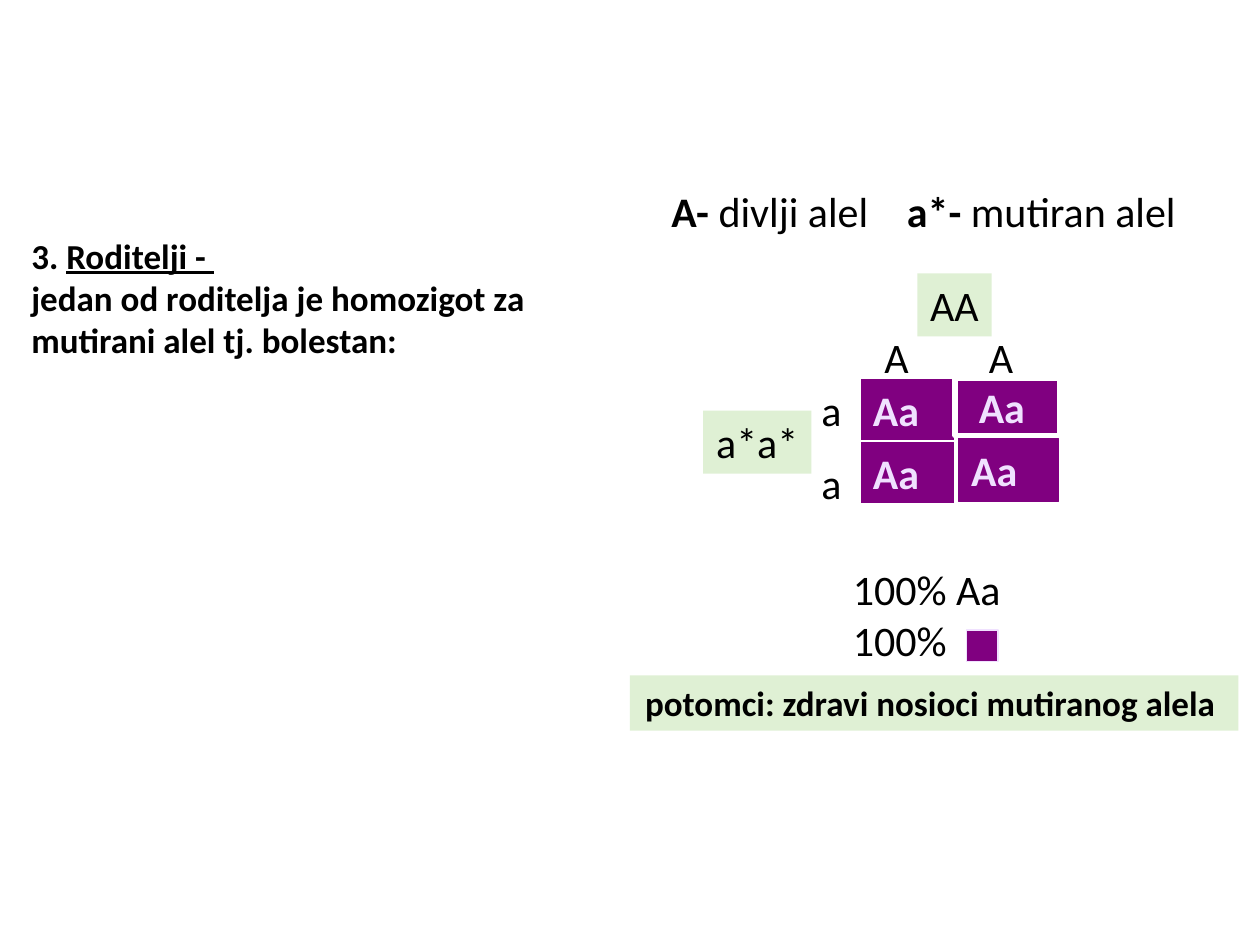
from dataclasses import dataclass
from lxml.etree import SubElement
from pptx import Presentation
from pptx.dml.color import RGBColor
from pptx.enum.shapes import MSO_SHAPE
from pptx.enum.text import MSO_ANCHOR, PP_ALIGN
from pptx.oxml.ns import qn
from pptx.util import Inches, Pt


@dataclass(frozen=True)
class Theme:
    font: str = "Calibri"
    ink: str = "000000"
    purple: str = "800080"
    lilac: str = "F0E1FF"
    green: str = "DFF0D4"
    white: str = "FFFFFF"
    large: int = 24
    small: int = 20


T = Theme()


def add_runs(p, runs, size, color):
    for text, style in runs:
        r = p.add_run()
        r.text = text
        r.font.color.rgb = RGBColor.from_string(color)
        fmt = {"name": T.font, "size": Pt(size), **style}
        for name, value in fmt.items():
            setattr(r.font, name, value)


def set_text(s, paras, size=T.large, color=T.ink, align=PP_ALIGN.LEFT, wrap=True):
    tf = s.text_frame
    fmt = {"word_wrap": wrap, "vertical_anchor": MSO_ANCHOR.TOP}
    for name, value in fmt.items():
        setattr(tf, name, value)
    for i, runs in enumerate(paras):
        p = tf.add_paragraph() if i else tf.paragraphs[0]
        p.alignment = align
        add_runs(p, runs, size, color)


def add_text(slide, box, paras, **style):
    s = slide.shapes.add_textbox(*map(Inches, box))
    set_text(s, paras, **style)
    return s


def add_rect(slide, box, fill, line=None, weight=0.75):
    s = slide.shapes.add_shape(MSO_SHAPE.RECTANGLE, *map(Inches, box))
    s.shadow.inherit = False
    s.fill.solid()
    s.fill.fore_color.rgb = RGBColor.from_string(fill)
    if line:
        s.line.color.rgb = RGBColor.from_string(line)
        s.line.width = Pt(weight)
    else:
        s.line.fill.background()
    return s


def add_badge(slide, box, text, **style):
    s = add_rect(slide, box, T.green)
    set_text(s, [[(text, {"bold": style.pop("bold", False)})]],
             align=PP_ALIGN.CENTER, **style)


def add_case(slide, x, y, w, h):
    add_text(slide, (x, y, w, h), [
        [("3. ", {"bold": True}), ("Roditelji - ", {"bold": True, "underline": True})],
        [("jedan od roditelja je homozigot za mutirani alel tj. bolestan:", {"bold": True})],
    ], size=T.small)


def add_legend(slide, x, y, w, h):
    s = add_text(slide, (x, y, w, h), [[
        ("A- ", {"bold": True}), ("divlji alel\t", {}),
        ("a*- ", {"bold": True}), ("mutiran alel", {}),
    ]])
    tabs = SubElement(s.text_frame.paragraphs[0]._p.get_or_add_pPr(), qn("a:tabLst"))
    SubElement(tabs, qn("a:tab"), pos=str(Inches(1.87)), algn="l")


def add_cross(slide, x, y, w, h):
    genotype = [[("Aa", {"bold": True})]]
    row = 0.5
    left, top = x + 1.25, y + 0.83
    for i in range(2):
        s = add_rect(slide, (left, top + i * row, 0.75, row), T.purple, T.white)
        set_text(s, genotype, color=T.lilac)
    add_rect(slide, (left + 0.75, top, 0.83, 0.46), T.purple, T.white, 3)
    add_text(slide, (left + 0.84, top - 0.02, 0.63, row), genotype,
             color=T.lilac, wrap=False)
    s = add_rect(slide, (left + 0.78, top + 0.48, 0.79, row), T.purple, T.purple)
    set_text(s, genotype, color=T.lilac)

    for i in range(2):
        add_text(slide, (x + 1.34 + i * 0.83, y + 0.41, 0.43, row),
                 [[("A", {})]], wrap=False)
        add_text(slide, (x + 0.84, top + i * 0.58, 0.38, row),
                 [[("a", {})]], wrap=False)
    add_badge(slide, (x + 1.7, y, 0.59, row), "AA", wrap=False)
    add_badge(slide, (x, y + 1.09, 0.86, row), "a*a*", wrap=False)


def add_outcome(slide, x, y, w, h):
    for i, label in enumerate(("100% Aa", "100%")):
        add_text(slide, (x + 1.67, y + i * 0.41, 1.92, 0.5), [[(label, {})]])
    add_rect(slide, (x + 2.67, y + 0.58, 0.25, 0.25), T.purple, T.lilac)
    add_badge(slide, (x, y + h - 0.44, w, 0.44),
              "potomci: zdravi nosioci mutiranog alela ", size=T.small, bold=True)


def main():
    prs = Presentation()
    prs.slide_width, prs.slide_height = Inches(10), Inches(7.5)
    slide = prs.slides.add_slide(prs.slide_layouts[6])
    add_cross(slide, 5.58, 2.17, 2.83, 1.91)
    add_outcome(slide, 5, 4.42, 4.83, 1.38)
    add_legend(slide, 5.23, 1.42, 4.77, 0.5)
    add_case(slide, 0.15, 1.81, 5.08, 1.11)
    prs.save("out.pptx")


if __name__ == "__main__":
    main()
